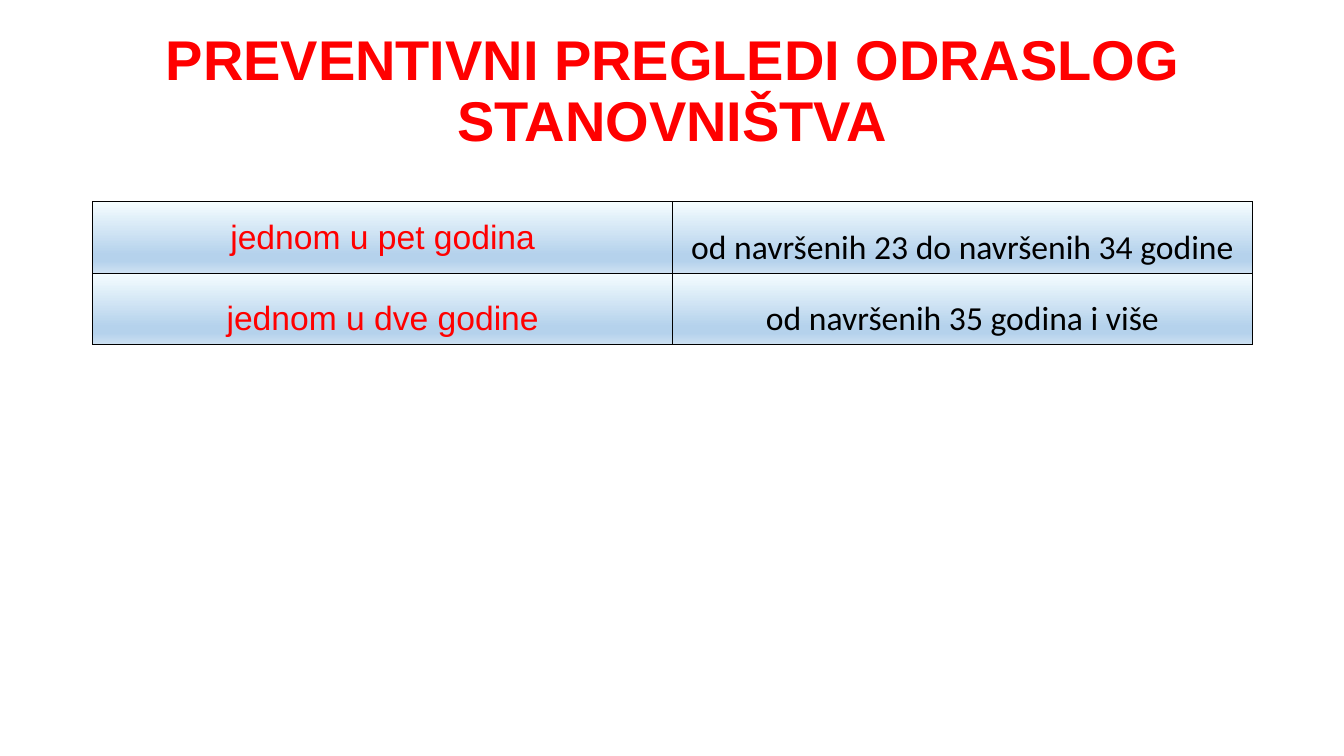
from lxml.etree import SubElement
from pptx import Presentation
from pptx.dml.color import RGBColor
from pptx.enum.text import MSO_ANCHOR, MSO_AUTO_SIZE, PP_ALIGN
from pptx.oxml.ns import qn
from pptx.util import Inches, Pt

# Content: (text, font, colour, line spacing, space before)
TITLE = "PREVENTIVNI PREGLEDI ODRASLOG STANOVNIŠTVA"
ROWS = [
    [("jednom u pet godina", "Arial", "red", 1.0, 0),
     ("od navršenih 23 do navršenih 34 godine", "Calibri", "black", 1.5, 10)],
    [("jednom u dve godine", "Arial", "red", 1.5, 10),
     ("od navršenih 35 godina i više", "Calibri", "black", 1.5, 10)],
]
COLORS = {"red": "FF0000", "black": "000000", "pale": "F5FDFF",
          "blue": "B5D2EC", "light": "CEE1F2"}
GRADIENT = [(0, "pale"), (74, "blue"), (83, "blue"), (100, "light")]

# Layout
LEFT, WIDTH = 0.92, 11.5
TITLE_TOP, TITLE_HEIGHT = 0.4, 1.04
TABLE_TOP, ROW_HEIGHT = 2, 0.71


def style_paragraph(para, size, font, color, spacing, bold=False):
    para.alignment = PP_ALIGN.CENTER
    para.line_spacing = spacing
    para.font.size = Pt(size)
    para.font.name = font
    para.font.bold = bold
    para.font.color.rgb = RGBColor.from_string(COLORS[color])


def add_color(parent, color):
    SubElement(parent, qn("a:srgbClr"), val=COLORS[color])


def paint_cell(cell):
    """Give a cell black borders and a top-to-bottom gradient."""
    properties = cell._tc.get_or_add_tcPr()
    for side in ("lnL", "lnR", "lnT", "lnB"):
        line = SubElement(properties, qn(f"a:{side}"), w=str(Pt(1)))
        add_color(SubElement(line, qn("a:solidFill")), "black")
    gradient = SubElement(properties, qn("a:gradFill"), rotWithShape="1")
    stops = SubElement(gradient, qn("a:gsLst"))
    for percent, color in GRADIENT:
        add_color(SubElement(stops, qn("a:gs"), pos=str(percent * 1000)), color)
    SubElement(gradient, qn("a:lin"), ang=str(90 * 60000), scaled="0")


def main():
    deck = Presentation()
    deck.slide_width, deck.slide_height = Inches(13.33), Inches(7.5)
    page = deck.slides.add_slide(deck.slide_layouts[5])

    # Title
    title = page.shapes.title
    title.left, title.top = Inches(LEFT), Inches(TITLE_TOP)
    title.width, title.height = Inches(WIDTH), Inches(TITLE_HEIGHT)
    frame = title.text_frame
    frame.text = TITLE
    frame.word_wrap = True
    frame.auto_size = MSO_AUTO_SIZE.NONE
    frame.vertical_anchor = MSO_ANCHOR.MIDDLE
    style_paragraph(frame.paragraphs[0], 40, "Arial", "red", 0.9, bold=True)

    # Table of check-up intervals
    table = page.shapes.add_table(
        len(ROWS), len(ROWS[0]), Inches(LEFT), Inches(TABLE_TOP),
        Inches(WIDTH), Inches(ROW_HEIGHT * len(ROWS))).table
    table.first_row = table.horz_banding = False
    for row_index, row in enumerate(ROWS):
        for column_index, (text, font, color, spacing, before) in enumerate(row):
            cell = table.cell(row_index, column_index)
            cell.text = text
            cell.vertical_anchor = MSO_ANCHOR.MIDDLE
            para = cell.text_frame.paragraphs[0]
            style_paragraph(para, 24, font, color, spacing)
            para.space_before = Pt(before)
            paint_cell(cell)

    deck.save("out.pptx")


if __name__ == "__main__":
    main()
